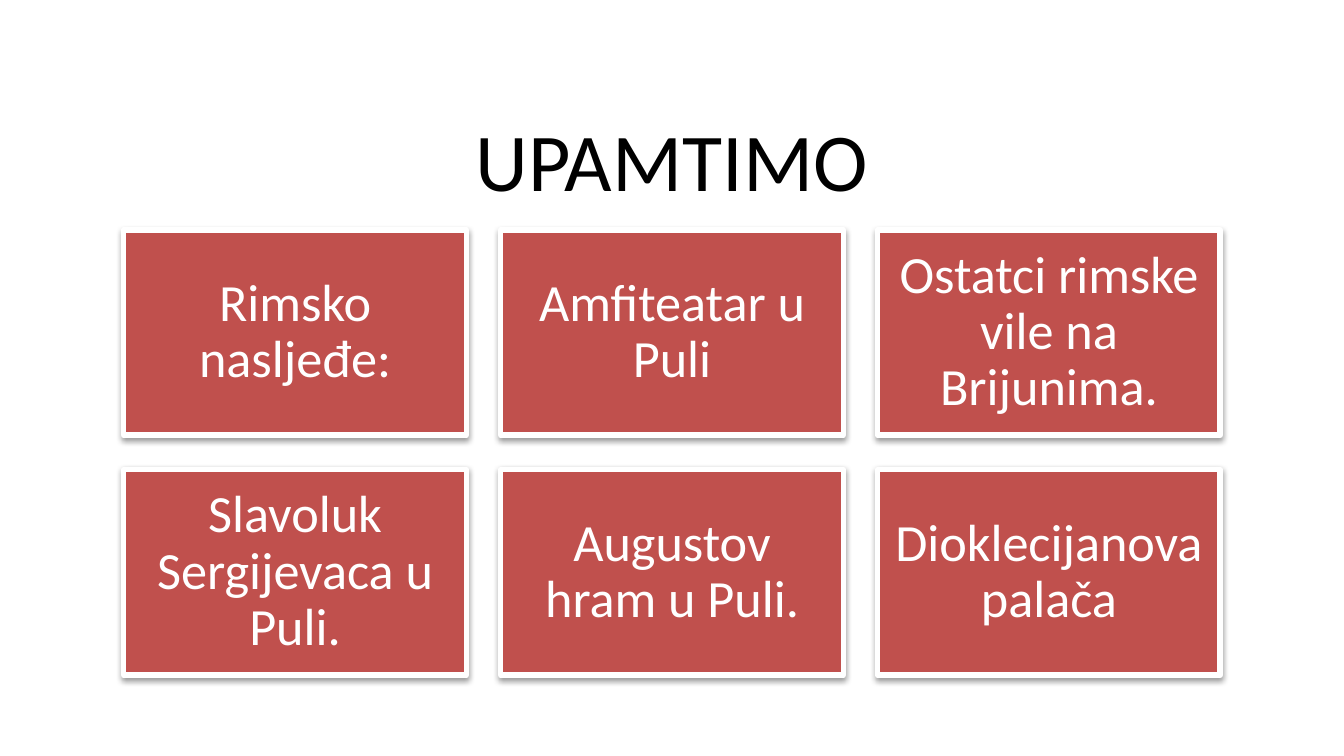
from lxml import etree
from pptx import Presentation
from pptx.dml.color import RGBColor
from pptx.enum.shapes import MSO_SHAPE
from pptx.enum.text import MSO_ANCHOR, PP_ALIGN
from pptx.oxml.ns import qn
from pptx.util import Pt

RECT = MSO_SHAPE.RECTANGLE
MIDDLE = MSO_ANCHOR.MIDDLE
CENTER = PP_ALIGN.CENTER

COLORS = {"text": "000000", "card": "C0504D", "light": "FFFFFF", "shadow": "000000"}
FONT = "Calibri"
TITLE_ONLY = 5

# Card grid, in points
SLIDE_W, SLIDE_H = 720, 405
COLS = 3
CARD_W, CARD_H = 183.6, 110.16
GAP = CARD_W / 10
GRID_LEFT = (SLIDE_W - COLS * CARD_W - (COLS - 1) * GAP) / 2
GRID_TOP = 123.1

CARDS = [
    "Rimsko nasljeđe:",
    "Amfiteatar u Puli",
    "Ostatci rimske vile na Brijunima.",
    "Slavoluk Sergijevaca u Puli.",
    "Augustov hram u Puli.",
    "Dioklecijanova palača",
]


class SlideBuilder:
    def __init__(self, prs):
        self.s = prs.slides.add_slide(prs.slide_layouts[TITLE_ONLY])

    def color(self, name):
        return RGBColor.from_string(COLORS[name])

    def set_text(self, sp, text, size, color):
        tf = sp.text_frame
        tf.word_wrap = True
        tf.vertical_anchor = MIDDLE
        p = tf.paragraphs[0]
        p.text = text
        p.alignment = CENTER
        p.line_spacing = 0.9
        p.font.name = FONT
        p.font.size = Pt(size)
        p.font.color.rgb = self.color(color)
        return tf

    def title(self, text, left, top, width, height):
        sp = self.s.shapes.title
        sp.left, sp.top, sp.width, sp.height = map(Pt, (left, top, width, height))
        self.set_text(sp, text, 44, "text")

    def shadow(self, sp):
        sp.shadow.inherit = False
        effects = sp._element.spPr.find(qn("a:effectLst"))
        outer = etree.SubElement(
            effects, qn("a:outerShdw"), blurRad=str(Pt(3.1)), dist=str(Pt(1.6)),
            dir="5400000", rotWithShape="0")
        clr = etree.SubElement(outer, qn("a:srgbClr"), val=COLORS["shadow"])
        etree.SubElement(clr, qn("a:alpha"), val="38000")

    def card(self, group, text, left, top):
        sp = group.shapes.add_shape(RECT, Pt(left), Pt(top), Pt(CARD_W), Pt(CARD_H))
        sp.fill.solid()
        sp.fill.fore_color.rgb = self.color("card")
        sp.line.color.rgb = self.color("light")
        sp.line.width = Pt(3)
        self.shadow(sp)
        tf = self.set_text(sp, text, 28, "light")
        tf.margin_left = tf.margin_top = tf.margin_right = tf.margin_bottom = Pt(8.4)

    def card_grid(self, texts):
        group = self.s.shapes.add_group_shape()
        for i, text in enumerate(texts):
            row, col = divmod(i, COLS)
            self.card(group, text, GRID_LEFT + col * (CARD_W + GAP),
                      GRID_TOP + row * (CARD_H + GAP))


def main():
    prs = Presentation()
    prs.slide_width, prs.slide_height = Pt(SLIDE_W), Pt(SLIDE_H)
    slide = SlideBuilder(prs)

    # Heading
    slide.title("UPAMTIMO", 36, 60.5, 648, 56.2)

    # Roman heritage cards
    slide.card_grid(CARDS)

    prs.save("out.pptx")


if __name__ == "__main__":
    main()
